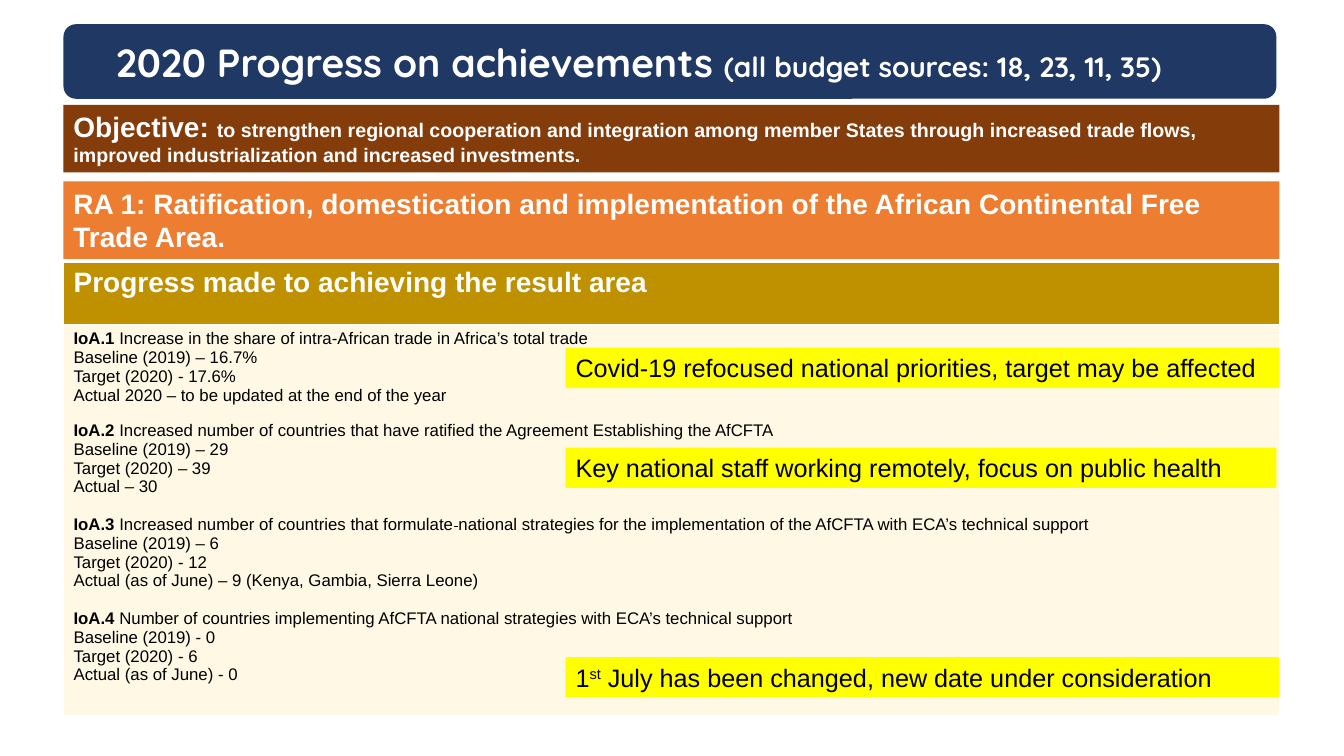
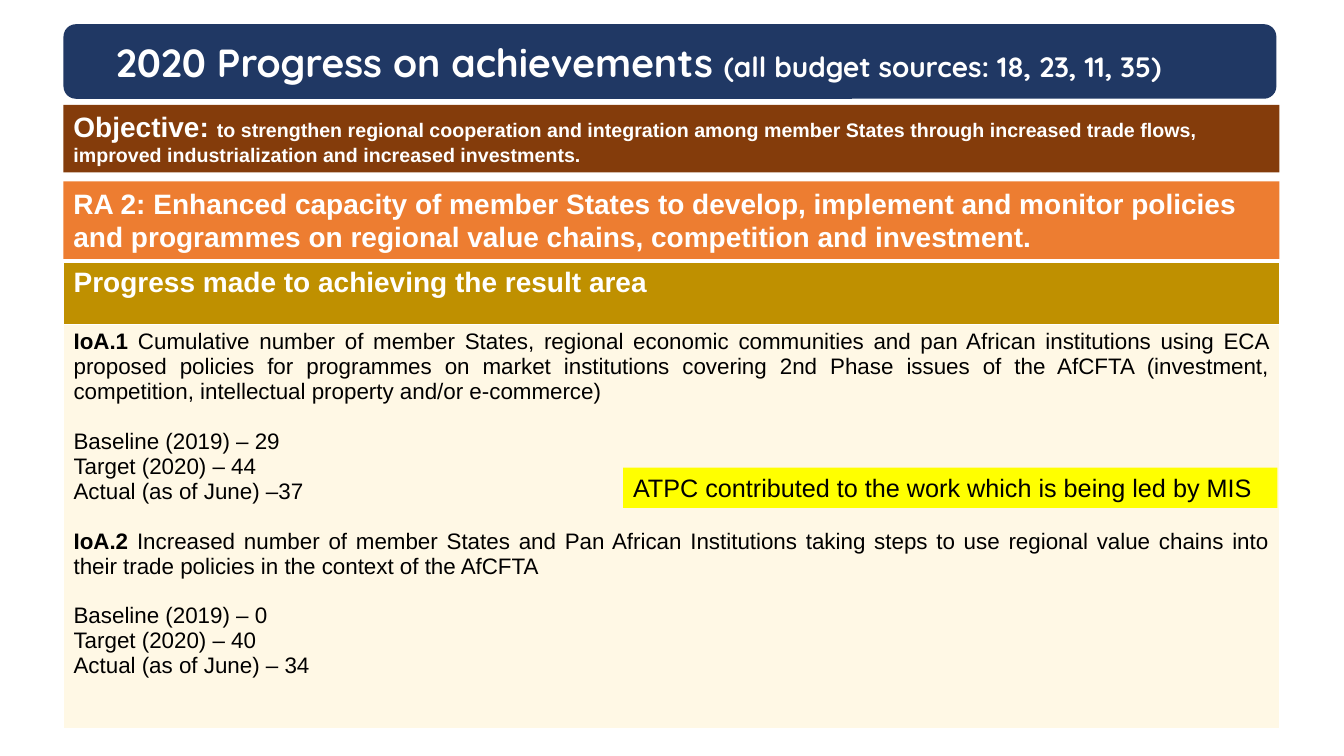
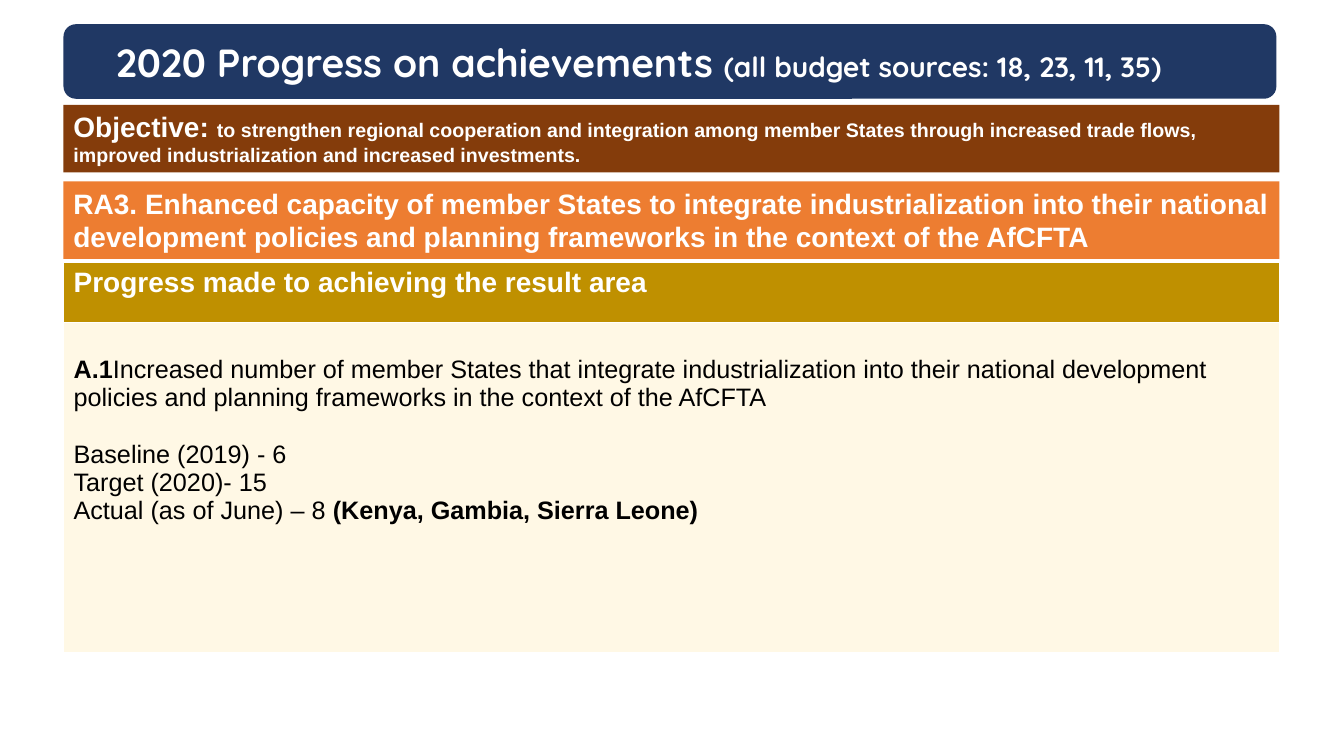
from dataclasses import dataclass

from lxml.etree import SubElement
from pptx import Presentation
from pptx.dml.color import RGBColor
from pptx.enum.shapes import MSO_SHAPE as Shape
from pptx.enum.text import MSO_ANCHOR as Anchor, PP_ALIGN as Align
from pptx.oxml.ns import qn
from pptx.util import Emu, Inches, Pt

COLORS = {
    "navy": "203864",
    "brown": "843C0B",
    "orange": "ED7D31",
    "gold": "BF9000",
    "cream": "FFF8E5",
    "yellow": "FFFF00",
    "white": "FFFFFF",
    "black": "000000",
}
BODY_FONT, TITLE_FONT = "Arial", "Quicksand"
WIDTH, HEIGHT = Inches(13.33), Inches(7.5)
GRID_COLS, GRID_ROWS = 133.3, 75
LEFT, FULL = 6.3, 120.6  # band start and span, in grid columns
TABLE_TOP = 26


@dataclass(frozen=True)
class Run:
    text: str
    bold: bool = False
    size: float | None = None
    strike: bool = False
    superscript: bool = False


@dataclass(frozen=True)
class Para:
    runs: tuple[Run, ...]
    gap: float = 0  # points before the paragraph


@dataclass(frozen=True)
class Box:
    """A place on the grid, in columns and rows."""
    col: float
    row: float
    cols: float
    rows: float

    def emu(self) -> tuple[Emu, Emu, Emu, Emu]:
        return across(self.col), down(self.row), across(self.cols), down(self.rows)


@dataclass(frozen=True)
class Callout:
    box: Box
    runs: tuple[Run, ...]


@dataclass(frozen=True)
class ResultArea:
    heading: str
    size: float
    paras: list[Para]
    header_rows: float
    body_rows: float
    callouts: tuple[Callout, ...] = ()
    align: Align = Align.LEFT
    top_inset: float = 0.5


def across(cols: float) -> Emu:
    return Emu(round(WIDTH * cols / GRID_COLS))


def down(rows: float) -> Emu:
    return Emu(round(HEIGHT * rows / GRID_ROWS))


def indicator(label: str, text: str, values: list[str], gap: float = 0,
              value_gap: float = 0) -> list[Para]:
    """An indicator's heading followed by its baseline, target and actual."""
    head = Para((Run(label, bold=True), Run(text)), gap)
    return [head] + [Para((Run(v),), 0 if i else value_gap) for i, v in enumerate(values)]


TITLE_BOX = Box(LEFT, 2.4, 120.3, 7.4)
TITLE = (Run("2020 Progress on achievements ", True, 28),
         Run("(all budget sources: 18, 23, 11, 35)", True, 20))
OBJECTIVE = (Run("Objective: ", True, 20),
             Run("to strengthen regional cooperation and integration among member States "
                 "through increased trade flows, improved industrialization and increased "
                 "investments.", True, 14))
PROGRESS = Run("Progress made to achieving the result area", True, 20)

STRATEGIES = Para((
    Run("IoA.3", bold=True),
    Run(" Increased number of countries that formulate"),
    Run(" ", strike=True),
    Run("national strategies for the implementation of the AfCFTA with ECA’s technical support"),
), 13.4)

AREAS = [
    ResultArea(
        "RA 1: Ratification, domestication and implementation of the African Continental "
        "Free Trade Area.",
        12,
        indicator("IoA.1", " Increase in the share of intra-African trade in Africa’s total trade",
                  ["Baseline (2019) – 16.7%", "Target (2020) - 17.6%",
                   "Actual 2020 – to be updated at the end of the year"])
        + indicator("IoA.2", " Increased number of countries that have ratified the Agreement "
                    "Establishing the AfCFTA",
                    ["Baseline (2019) – 29", "Target (2020) – 39", "Actual – 30"], 11.7)
        + [STRATEGIES]
        + [Para((Run(v),)) for v in (
            "Baseline (2019) – 6", "Target (2020) - 12",
            "Actual (as of June) – 9 (Kenya, Gambia, Sierra Leone)")]
        + indicator("IoA.4", " Number of countries implementing AfCFTA national strategies with "
                    "ECA’s technical support",
                    ["Baseline (2019) - 0", "Target (2020) - 6", "Actual (as of June) - 0"], 13.4),
        6.2, 38.8,
        (
            Callout(Box(56.1, 34.5, 70.8, 4), (
                Run("Covid-19 refocused national priorities, target may be affected"),)),
            Callout(Box(56.1, 44.4, 70.5, 4), (
                Run("Key national staff working remotely, focus on public health"),)),
            Callout(Box(56.1, 65.2, 70.8, 4), (
                Run("1"), Run("st", superscript=True),
                Run(" July has been changed, new date under consideration"))),
        ),
    ),
    ResultArea(
        "RA 2: Enhanced capacity of member States to develop, implement and monitor policies "
        "and programmes on regional value chains, competition and investment.",
        16,
        indicator("IoA.1 ", "Cumulative number of member States, regional economic communities "
                  "and pan African institutions using ECA proposed policies for programmes on "
                  "market institutions covering 2nd Phase issues of the AfCFTA (investment, "
                  "competition, intellectual property and/or e-commerce)",
                  ["Baseline (2019) – 29", "Target (2020) – 44", "Actual (as of June) –37"],
                  value_gap=17.9)
        + indicator("IoA.2 ", "Increased number of member States and Pan African Institutions "
                    "taking steps to use regional value chains into their trade policies in the "
                    "context of the AfCFTA",
                    ["Baseline (2019) – 0", "Target (2020) – 40", "Actual (as of June) – 34"],
                    17.9, 17.9),
        6.2, 40.1,
        (Callout(Box(61.8, 46.4, 64.9, 4), (
            Run("ATPC contributed to the work which is being led by MIS"),)),),
        Align.JUSTIFY,
    ),
    ResultArea(
        "RA3. Enhanced capacity of member States to integrate industrialization into their "
        "national development policies and planning frameworks in the context of the AfCFTA",
        18,
        indicator("A.1", "Increased number of member States that integrate industrialization "
                  "into their national development policies and planning frameworks in the "
                  "context of the AfCFTA",
                  ["Baseline (2019) - 6", "Target (2020)- 15"], value_gap=20.1)
        + [Para((Run("Actual (as of June) – 8 "),
                 Run("(Kenya, Gambia, Sierra Leone)", bold=True)))],
        6, 32.7,
        top_inset=3.3,
    ),
]


def rgb(name: str) -> RGBColor:
    return RGBColor.from_string(COLORS[name])


def add_runs(p, runs: tuple[Run, ...], size: float, color: str, font: str = BODY_FONT) -> None:
    for run in runs:
        r = p.add_run()
        r.text = run.text
        f = r.font
        f.name, f.size, f.bold = font, Pt(run.size or size), run.bold
        f.color.rgb = rgb(color)
        if run.strike:
            r._r.get_or_add_rPr().set("strike", "sngStrike")
        if run.superscript:
            r._r.get_or_add_rPr().set("baseline", "30000")


def add_block(slide, kind: Shape, box: Box, fill: str):
    s = slide.shapes.add_shape(kind, *box.emu())
    s.shadow.inherit = False
    s.fill.solid()
    s.fill.fore_color.rgb = rgb(fill)
    s.line.fill.background()
    return s


def add_title(slide) -> None:
    """Set the title over a rounded band placed behind it."""
    s = slide.shapes.title
    band = add_block(slide, Shape.ROUNDED_RECTANGLE, TITLE_BOX, "navy")
    s._element.addprevious(band._element)
    s.left, s.top, s.width, s.height = TITLE_BOX.emu()
    tf = s.text_frame
    tf.word_wrap, tf.vertical_anchor = True, Anchor.MIDDLE
    tf.margin_left = tf.margin_right = across(1)
    tf.margin_top = tf.margin_bottom = down(1)
    p = tf.paragraphs[0]
    p.alignment = Align.LEFT
    p._p.get_or_add_pPr().set("marL", str(across(4.2)))
    add_runs(p, TITLE, 28, "white", TITLE_FONT)


def add_band(slide, box: Box, fill: str, runs: tuple[Run, ...], size: float,
             color: str = "white") -> None:
    tf = add_block(slide, Shape.RECTANGLE, box, fill).text_frame
    tf.word_wrap, tf.vertical_anchor = True, Anchor.TOP
    p = tf.paragraphs[0]
    p.alignment = Align.LEFT
    add_runs(p, runs, size, color)


def format_cell(cell, fill: str) -> None:
    """Give the cell its insets, white borders and fill."""
    cell.margin_left = cell.margin_right = across(1)
    cell.margin_top = cell.margin_bottom = down(0.5)
    tc_pr = cell._tc.get_or_add_tcPr()
    for side in ("lnL", "lnR", "lnT", "lnB"):
        ln = SubElement(tc_pr, qn(f"a:{side}"), w=str(Pt(1)))
        solid = SubElement(ln, qn("a:solidFill"))
        SubElement(solid, qn("a:srgbClr"), val=COLORS["white"])
    cell.fill.solid()
    cell.fill.fore_color.rgb = rgb(fill)


def add_progress_table(slide, area: ResultArea) -> None:
    box = Box(LEFT, TABLE_TOP, FULL, area.header_rows + area.body_rows)
    table = slide.shapes.add_table(2, 1, *box.emu()).table
    table.horz_banding = table.first_row = False
    for row, rows in zip(table.rows, (area.header_rows, area.body_rows)):
        row.height = down(rows)
    header, body = table.cell(0, 0), table.cell(1, 0)
    format_cell(header, "gold")
    add_runs(header.text_frame.paragraphs[0], (PROGRESS,), 20, "white")
    format_cell(body, "cream")
    body.margin_top = down(area.top_inset)
    tf = body.text_frame
    for i, para in enumerate(area.paras):
        p = tf.add_paragraph() if i else tf.paragraphs[0]
        p.alignment = area.align
        if para.gap:
            p.space_before = Pt(para.gap)
        add_runs(p, para.runs, area.size, "black")


def add_area_slide(prs, area: ResultArea) -> None:
    slide = prs.slides.add_slide(prs.slide_layouts[5])
    add_title(slide)
    add_band(slide, Box(LEFT, 10.4, FULL, 6.7), "brown", OBJECTIVE, 14)
    add_progress_table(slide, area)
    add_band(slide, Box(LEFT, 18, FULL, 7.7), "orange", (Run(area.heading, True),), 20)
    for callout in area.callouts:
        add_band(slide, callout.box, "yellow", callout.runs, 18, "black")


def main() -> None:
    prs = Presentation()
    prs.slide_width, prs.slide_height = WIDTH, HEIGHT
    for area in AREAS:
        add_area_slide(prs, area)
    prs.save("out.pptx")


if __name__ == "__main__":
    main()
